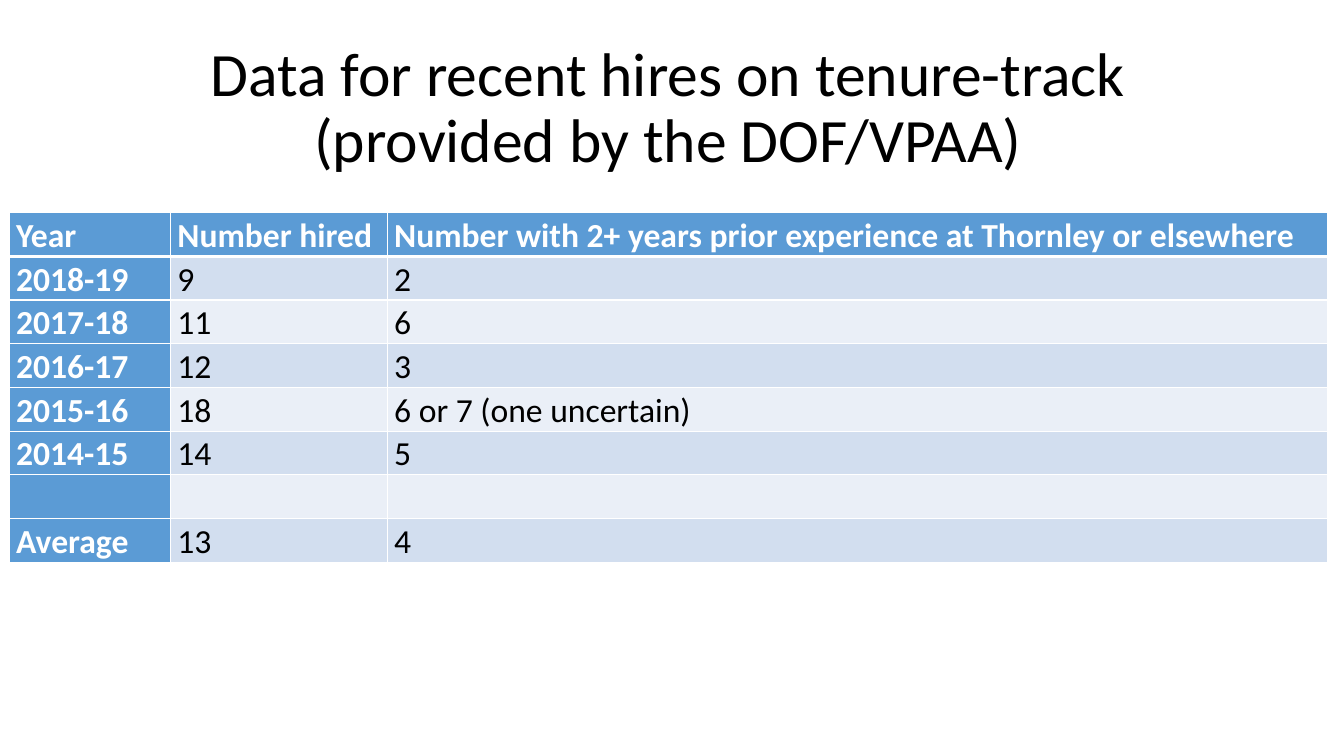
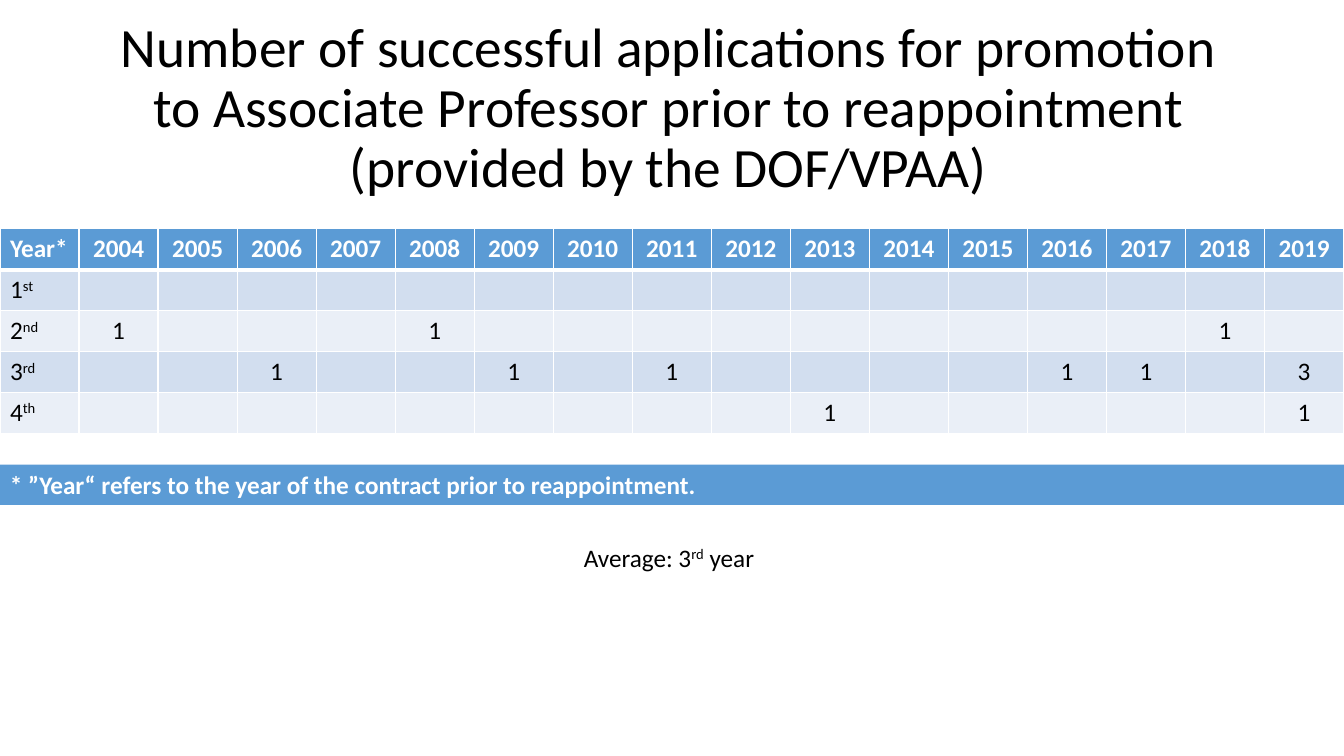
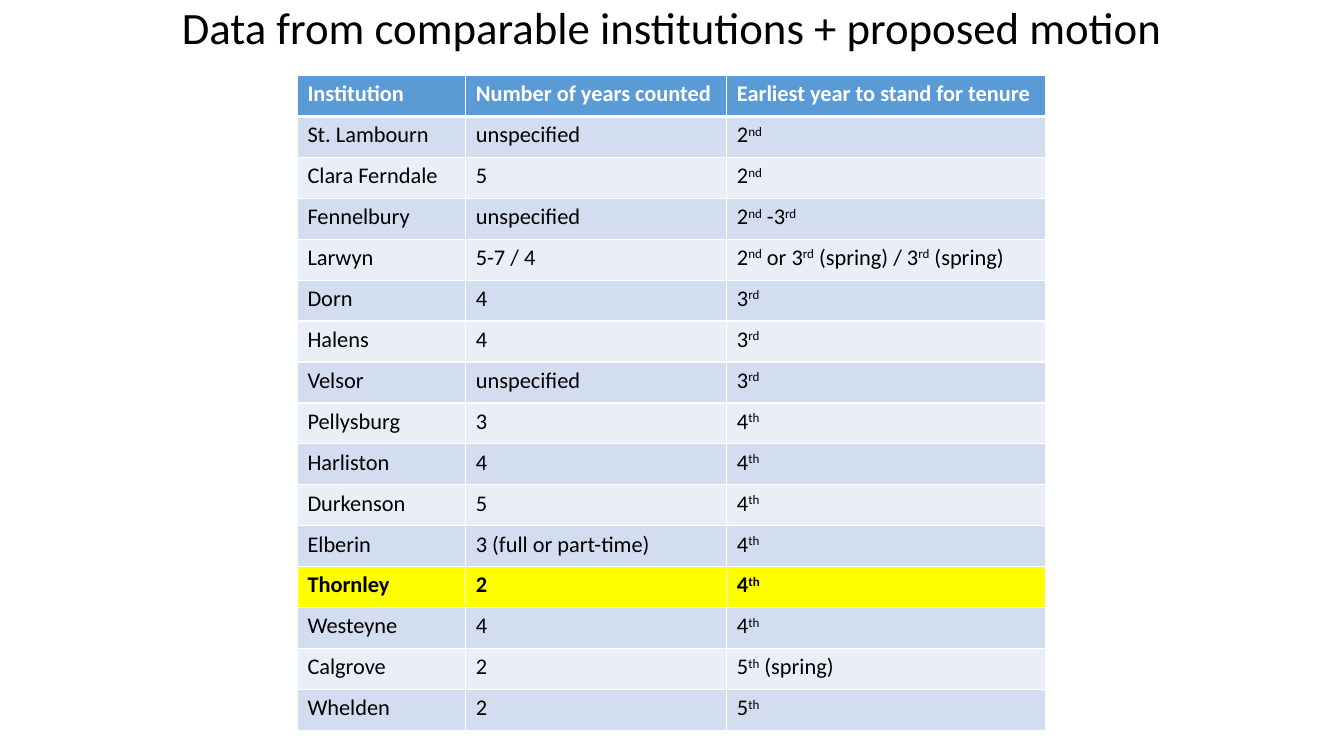
"""Build three slides of faculty hiring, promotion and tenure data."""
from dataclasses import dataclass

from pptx import Presentation
from pptx import slide as sl
from pptx import table as tb
from pptx.dml.color import RGBColor
from pptx.enum import shapes, text
from pptx.oxml import parse_xml
from pptx.oxml.ns import nsdecls
from pptx.text import text as tx
from pptx.util import Inches, Pt

FONT = "Calibri"
BLACK = RGBColor(0x00, 0x00, 0x00)
WHITE = RGBColor(0xFF, 0xFF, 0xFF)
BLUE = RGBColor(0x5B, 0x9B, 0xD5)
BANDS = (RGBColor(0xD2, 0xDE, 0xEF), RGBColor(0xEA, 0xEF, 0xF7))
YELLOW = RGBColor(0xFF, 0xFF, 0x00)
LEFT, CENTER, JUSTIFY = text.PP_ALIGN.LEFT, text.PP_ALIGN.CENTER, text.PP_ALIGN.JUSTIFY
TOP, MIDDLE = text.MSO_ANCHOR.TOP, text.MSO_ANCHOR.MIDDLE
SLIDE_WIDTH = 13.33
TITLE_BOX = (0.88, 0.36, 11.5, 1.45)
COLLEGE = "Thornley"

HIRES = [
    ["Year", "Number hired", f"Number with 2+ years prior experience at {COLLEGE} or elsewhere"],
    ["2018-19", "9", "2"],
    ["2017-18", "11", "6"],
    ["2016-17", "12", "3"],
    ["2015-16", "18", "6 or 7 (one uncertain)"],
    ["2014-15", "14", "5"],
    ["", "", ""],
    ["Average", "13", "4"],
]
YEARS = range(2004, 2020)
PROMOTIONS = {
    "1^st": {},
    "2^nd": {2004: 1, 2008: 1, 2018: 1},
    "3^rd": {2006: 1, 2009: 1, 2011: 1, 2016: 1, 2017: 1, 2019: 3},
    "4^th": {2013: 1, 2019: 1},
}
INSTITUTIONS = [
    ["Institution", "Number of years counted", "Earliest year to stand for tenure"],
    ["St. Lambourn", "unspecified", "2^nd"],
    ["Clara Ferndale", "5", "2^nd"],
    ["Fennelbury", "unspecified", "2^nd^ -3^rd"],
    ["Larwyn", "5-7 / 4", "2^nd^ or 3^rd^ (spring) / 3^rd^ (spring)"],
    ["Dorn", "4", "3^rd"],
    ["Halens", "4", "3^rd"],
    ["Velsor", "unspecified", "3^rd"],
    ["Pellysburg", "3", "4^th"],
    ["Harliston", "4", "4^th"],
    ["Durkenson", "5", "4^th"],
    ["Elberin", "3 (full or part-time)", "4^th"],
    [COLLEGE, "2", "4^th"],
    ["Westeyne", "4", "4^th"],
    ["Calgrove", "2", "5^th^ (spring)"],
    ["Whelden", "2", "5^th"],
]


@dataclass(frozen=True)
class DataTable:
    """Content, place and format of one banded table."""

    rows: list[list[str]]
    left: float
    top: float
    widths: list[float]
    height: float
    size: float
    first_align: text.PP_ALIGN = LEFT
    align: text.PP_ALIGN = LEFT
    spacing: float = 1.0
    margins: tuple[float, float] = (0.1, 0.05)
    header_column: bool = False
    highlight: str | None = None


def write(frame: tx.TextFrame, content: str, *, size: float, color: RGBColor = BLACK,
          bold: bool = False, align: text.PP_ALIGN = LEFT, spacing: float = 1.0,
          anchor: text.MSO_ANCHOR = TOP) -> None:
    """Write one paragraph; carets switch superscript on and off."""
    frame.word_wrap = True
    frame.vertical_anchor = anchor
    paragraph = frame.paragraphs[0]
    paragraph.alignment = align
    paragraph.line_spacing = spacing
    for number, line in enumerate(content.split("\n")):
        if number:
            paragraph.add_line_break()
        for index, part in enumerate(line.split("^")):
            if not part:
                continue
            run = paragraph.add_run()
            run.text = part
            run.font.name, run.font.size = FONT, Pt(size)
            run.font.bold, run.font.color.rgb = bold, color
            if index % 2:
                run._r.get_or_add_rPr().set("baseline", "30000")


def add_text(slide: sl.Slide, content: str, box: tuple[float, ...], **style) -> None:
    """Add a text box."""
    write(slide.shapes.add_textbox(*map(Inches, box)).text_frame, content, **style)


def add_title(slide: sl.Slide, content: str, size: float,
              box: tuple[float, ...] = TITLE_BOX) -> None:
    """Add the centred slide title."""
    add_text(slide, content, box, size=size, align=CENTER, spacing=0.9, anchor=MIDDLE)


def add_band(slide: sl.Slide, content: str, top: float, height: float) -> None:
    """Add a blue band of full width with a bold note."""
    band = slide.shapes.add_shape(shapes.MSO_SHAPE.RECTANGLE, 0, Inches(top),
                                  Inches(SLIDE_WIDTH), Inches(height))
    band.shadow.inherit = False
    band.fill.solid()
    band.fill.fore_color.rgb = BLUE
    band.line.fill.background()
    write(band.text_frame, content, size=18, color=WHITE, bold=True)


def set_borders(cell: tb._Cell, row: int) -> None:
    """Draw white borders, thicker between header and body."""
    widths = {"L": 1, "R": 1, "T": 3 if row == 1 else 1, "B": 3 if row == 0 else 1}
    for side, width in widths.items():
        cell._tc.get_or_add_tcPr().append(parse_xml(
            f'<a:ln{side} {nsdecls("a")} w="{Pt(width)}"><a:solidFill>'
            f'<a:srgbClr val="{WHITE}"/></a:solidFill></a:ln{side}>'))


def add_data_table(slide: sl.Slide, data: DataTable) -> None:
    """Add a table with a blue header and banded rows."""
    table = slide.shapes.add_table(
        len(data.rows), len(data.widths), Inches(data.left), Inches(data.top),
        Inches(sum(data.widths)), Inches(data.height)).table
    for column, width in zip(table.columns, data.widths):
        column.width = Inches(width)
    for row, values in enumerate(data.rows):
        marked = values[0] == data.highlight
        for column, content in enumerate(values):
            cell = table.cell(row, column)
            header = row == 0 or (data.header_column and column == 0)
            set_borders(cell, row)
            cell.fill.solid()
            cell.fill.fore_color.rgb = (
                BLUE if header else YELLOW if marked else BANDS[(row - 1) % 2])
            cell.margin_left = cell.margin_right = Inches(data.margins[0])
            cell.margin_top = cell.margin_bottom = Inches(data.margins[1])
            write(cell.text_frame, content, size=data.size, color=WHITE if header else BLACK,
                  bold=header or marked, spacing=data.spacing,
                  align=data.align if column else data.first_align)


def main() -> None:
    """Build and save the presentation."""
    deck = Presentation()
    deck.slide_width, deck.slide_height = Inches(SLIDE_WIDTH), Inches(7.5)
    hires, promotions, institutions = (
        deck.slides.add_slide(deck.slide_layouts[6]) for _ in range(3))

    add_title(hires, "Data for recent hires on tenure-track (provided by the DOF/VPAA)", 44)
    add_data_table(hires, DataTable(
        HIRES, 0.09, 2.11, [1.6, 2.15, 9.33], 3.47, 24, first_align=JUSTIFY, align=JUSTIFY,
        spacing=1.07, margins=(0.07, 0), header_column=True))

    add_title(promotions, "Number of successful applications for promotion to Associate Professor "
              "prior to reappointment\n(provided by the DOF/VPAA)", 39.6)
    counts = [["Year*", *map(str, YEARS)]]
    counts += [[contract, *(str(found.get(year, "")) for year in YEARS)]
               for contract, found in PROMOTIONS.items()]
    columns = len(YEARS) + 1
    add_data_table(promotions, DataTable(
        counts, 0, 2.27, [SLIDE_WIDTH / columns] * columns, 2.03, 18, align=CENTER))
    add_band(promotions, "* ”Year“ refers to the year of the contract prior to reappointment.",
             4.61, 0.4)
    add_text(promotions, "Average: 3^rd^ year", (3.77, 5.33, 5.73, 0.4), size=18, align=CENTER)

    add_title(institutions, "Data from comparable institutions + proposed motion", 32,
              (0, 0, SLIDE_WIDTH, 0.59))
    add_data_table(institutions, DataTable(
        INSTITUTIONS, 2.95, 0.75, [1.67, 2.59, 3.16], 6.5, 16, highlight=COLLEGE))

    deck.save("out.pptx")


if __name__ == "__main__":
    main()
